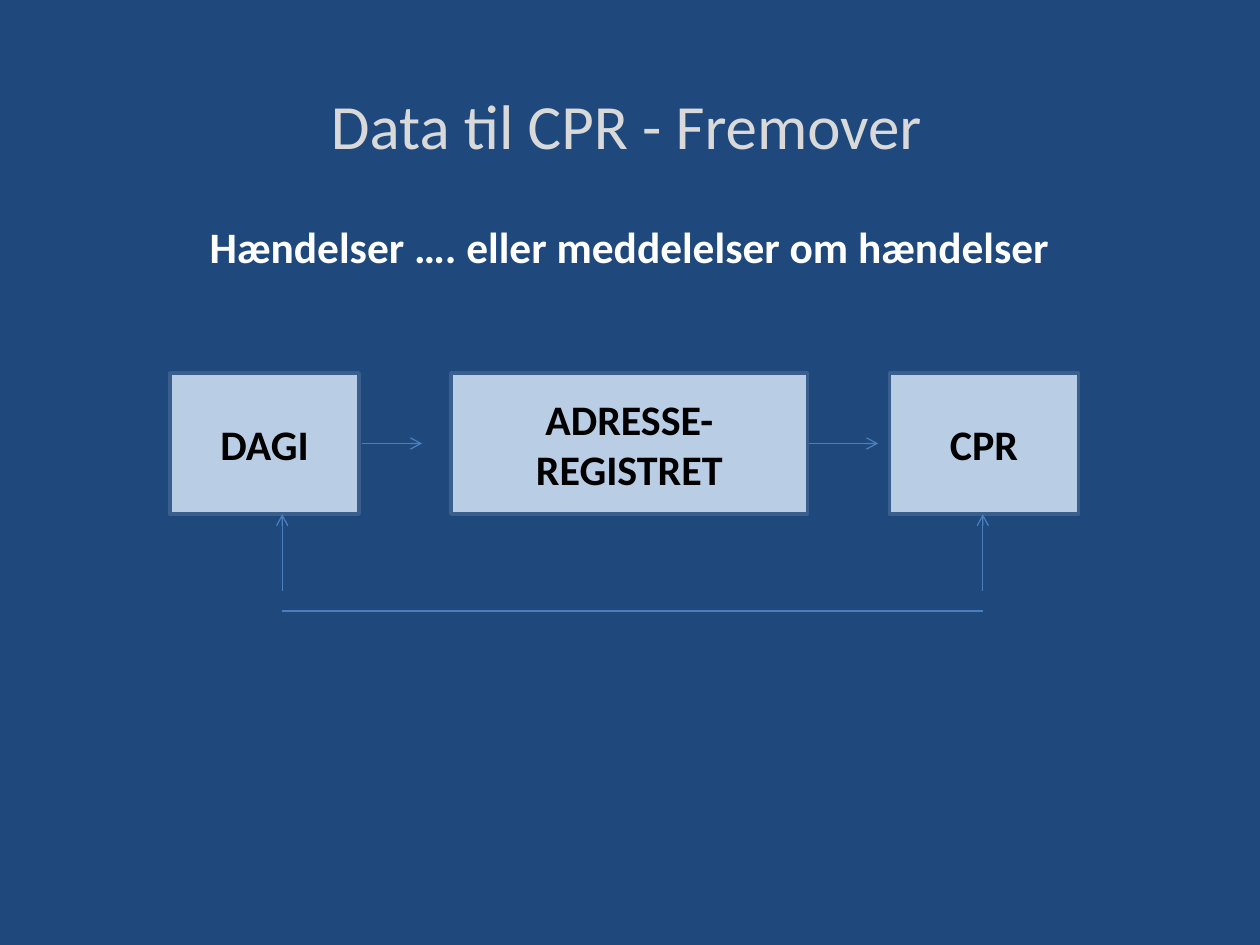
from dataclasses import dataclass

from lxml.etree import SubElement
from pptx import Presentation
from pptx.dml.color import RGBColor
from pptx.enum.shapes import MSO_CONNECTOR as Connector, MSO_SHAPE as Preset
from pptx.enum.text import MSO_ANCHOR as Anchor, PP_ALIGN as Align
from pptx.oxml.ns import qn
from pptx.util import Inches, Pt

COLORS = {
    "background": "1F497D",
    "title": "D9D9D9",
    "subtitle": "FFFFFF",
    "register": "B9CDE5",
    "border": "3A5F8C",
    "label": "000000",
    "flow": "4B7EBC",
}
FONT = "Calibri"
REGISTER_TOP, REGISTER_HEIGHT = 2.96, 1.12
REGISTER_BOTTOM = REGISTER_TOP + REGISTER_HEIGHT
FLOW_Y = REGISTER_TOP + REGISTER_HEIGHT / 2
RETURN_LEFT, RETURN_RIGHT = 2.24, 7.8
RETURN_Y, RISER_START = 4.85, 4.69


@dataclass(frozen=True)
class Register:
    label: str
    left: float
    width: float


@dataclass(frozen=True)
class Flow:
    start: tuple[float, float]
    end: tuple[float, float]
    arrow: bool = True


REGISTERS = [
    Register("DAGI", 1.35, 1.5),
    Register("ADRESSE-REGISTRET", 3.58, 2.83),
    Register("CPR", 7.06, 1.5),
]
FLOWS = [
    Flow((2.87, FLOW_Y), (3.35, FLOW_Y)),
    Flow((6.42, FLOW_Y), (6.97, FLOW_Y)),
    Flow((RETURN_LEFT, RETURN_Y), (RETURN_RIGHT, RETURN_Y), arrow=False),
    *(Flow((x, RISER_START), (x, REGISTER_BOTTOM)) for x in (RETURN_RIGHT, RETURN_LEFT)),
]


def rgb(name: str) -> RGBColor:
    return RGBColor.from_string(COLORS[name])


def write_text(shape, text: str, *, size: float, color: str, bold: bool = False,
               anchor=Anchor.MIDDLE, inset_left: float = 0.1) -> None:
    frame = shape.text_frame
    frame.word_wrap = True
    frame.vertical_anchor = anchor
    frame.margin_left = Inches(inset_left)
    paragraph = frame.paragraphs[0]
    paragraph.alignment = Align.CENTER
    run = paragraph.add_run()
    run.text = text
    run.font.name = FONT
    run.font.size = Pt(size)
    run.font.bold = bold
    run.font.color.rgb = rgb(color)


def draw_register(slide, register: Register) -> None:
    box = slide.shapes.add_shape(
        Preset.RECTANGLE, Inches(register.left), Inches(REGISTER_TOP),
        Inches(register.width), Inches(REGISTER_HEIGHT))
    box.shadow.inherit = False
    box.fill.solid()
    box.fill.fore_color.rgb = rgb("register")
    box.line.color.rgb = rgb("border")
    box.line.width = Pt(2)
    write_text(box, register.label, size=24, color="label", bold=True)


def draw_flow(slide, flow: Flow) -> None:
    line = slide.shapes.add_connector(
        Connector.STRAIGHT, *(Inches(value) for value in flow.start + flow.end))
    line.line.color.rgb = rgb("flow")
    line.line.width = Pt(0.75)
    if flow.arrow:
        SubElement(line.line._get_or_add_ln(), qn("a:tailEnd"), type="arrow")
    SubElement(line._element.spPr, qn("a:effectLst"))


def main() -> None:
    deck = Presentation()
    deck.slide_width, deck.slide_height = Inches(10), Inches(7.5)
    slide = deck.slides.add_slide(deck.slide_layouts[6])
    slide.background.fill.solid()
    slide.background.fill.fore_color.rgb = rgb("background")

    title = slide.shapes.add_textbox(Inches(0.59), Inches(0.44), Inches(8.5), Inches(1.1))
    write_text(title, "Data til CPR - Fremover", size=36, color="title", inset_left=0.36)
    subtitle = slide.shapes.add_textbox(Inches(1.5), Inches(1.7), Inches(7), Inches(0.63))
    write_text(subtitle, "Hændelser …. eller meddelelser om hændelser",
               size=24.8, color="subtitle", bold=True, anchor=Anchor.TOP)

    for register in REGISTERS:
        draw_register(slide, register)
    for flow in FLOWS:
        draw_flow(slide, flow)
    deck.save("out.pptx")


if __name__ == "__main__":
    main()
